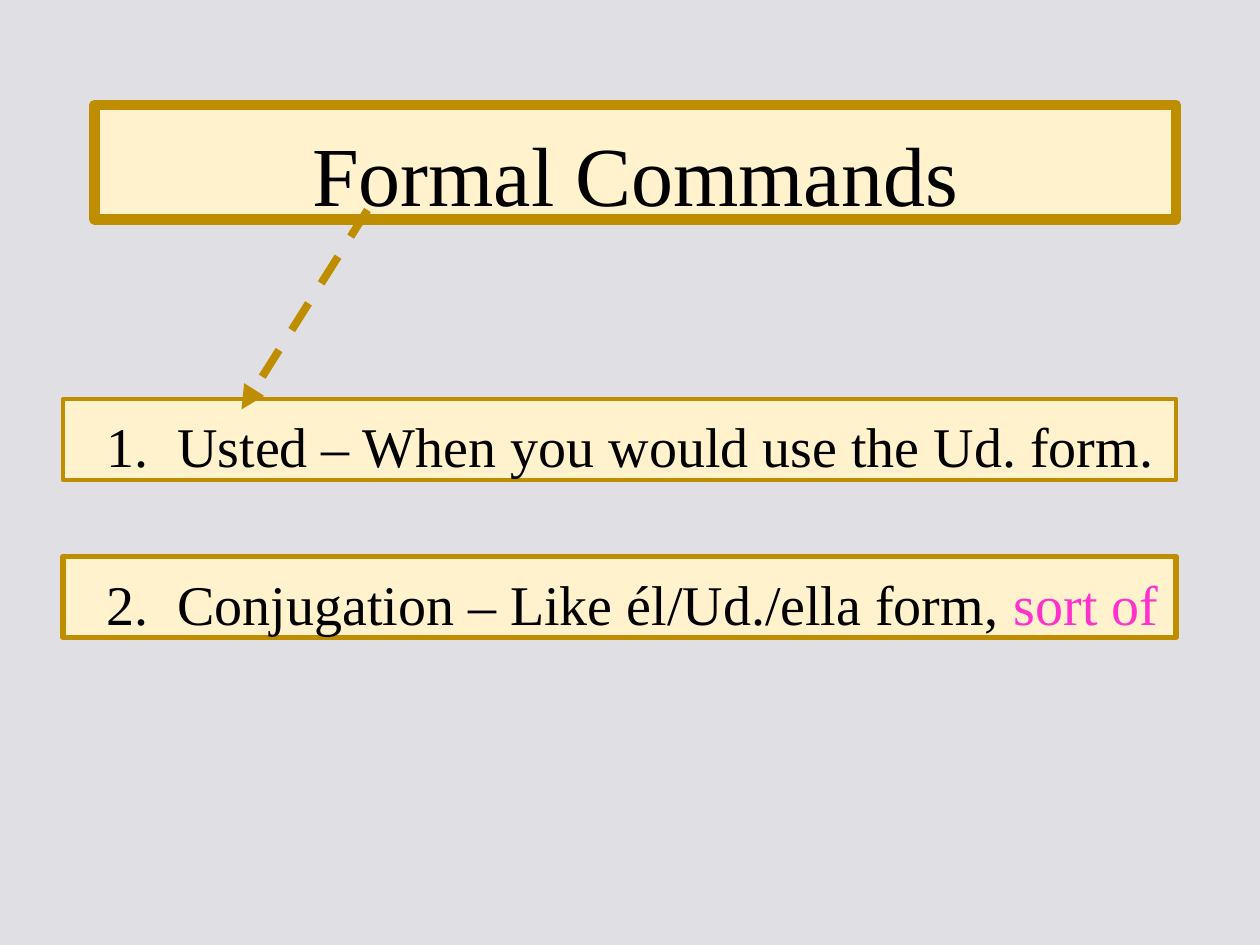
from lxml.etree import SubElement
from pptx import Presentation
from pptx.dml.color import RGBColor
from pptx.enum.dml import MSO_LINE
from pptx.enum.shapes import MSO_CONNECTOR, MSO_SHAPE
from pptx.enum.text import MSO_ANCHOR, PP_ALIGN
from pptx.oxml.ns import qn
from pptx.util import Inches, Pt

GREY = RGBColor(0xDF, 0xDF, 0xE4)
CREAM = RGBColor(0xFF, 0xF2, 0xCC)
GOLD = RGBColor(0xBF, 0x8E, 0x00)
BLACK = RGBColor(0, 0, 0)
PINK = RGBColor(0xFF, 0x33, 0xCC)
FONT = "Times New Roman"
LEFT, WIDTH, HEIGHT = 6, 106, 7.7


def cell(count):
    """Turn a count of grid cells, twelve to the inch, into a length."""
    return Inches(count / 12)


def add_box(slide, spot, edge, size, runs, top):
    """Add a framed box with coloured runs and return its paragraph."""
    box = slide.shapes.add_shape(MSO_SHAPE.RECTANGLE, *map(cell, spot))
    box.shadow.inherit = False
    box.fill.solid()
    box.fill.fore_color.rgb = CREAM
    box.line.color.rgb = GOLD
    box.line.width = Pt(edge)
    frame = box.text_frame
    frame.word_wrap = True
    frame.vertical_anchor = MSO_ANCHOR.TOP
    frame.margin_top, frame.margin_bottom = Inches(top), 0
    para = frame.paragraphs[0]
    for text, color in runs:
        run = para.add_run()
        run.text = text
        run.font.name = FONT
        run.font.size = Pt(size)
        run.font.color.rgb = color
    return para


def add_title(slide, text):
    """Add the centred title box."""
    para = add_box(slide, (9, 10, 103, 10.9), 6, 48, [(text, BLACK)], 0.14)
    para.alignment = PP_ALIGN.CENTER


def add_item(slide, row, edge, start, runs):
    """Add a boxed list item with an automatic number."""
    para = add_box(slide, (LEFT, row, WIDTH, HEIGHT), edge, 32, runs, 0.1)
    para.alignment = PP_ALIGN.LEFT
    props = para._p.get_or_add_pPr()
    props.set("marL", str(Inches(0.81)))
    props.set("indent", str(Inches(-0.56)))
    SubElement(props, qn("a:buFont"), typeface=FONT)
    SubElement(props, qn("a:buAutoNum"), type="arabicPeriod", startAt=str(start))


def add_arrow(slide, *ends):
    """Add a dashed arrow between two grid points."""
    arrow = slide.shapes.add_connector(MSO_CONNECTOR.STRAIGHT, *map(cell, ends))
    arrow.line.color.rgb = GOLD
    arrow.line.width = Pt(4.5)
    arrow.line.dash_style = MSO_LINE.DASH
    SubElement(arrow.line._get_or_add_ln(), qn("a:tailEnd"), type="triangle")
    SubElement(arrow._element.spPr, qn("a:effectLst"))


def main():
    """Build the slide and save it."""
    deck = Presentation()
    deck.slide_width, deck.slide_height = cell(120), cell(90)
    slide = deck.slides.add_slide(deck.slide_layouts[6])
    slide.background.fill.solid()
    slide.background.fill.fore_color.rgb = GREY
    add_title(slide, "Formal Commands")
    items = [
        (38, 2.25, [("Usted – When you would use the Ud. form.", BLACK)]),
        (53, 3, [("Conjugation – Like él/Ud./ella form, ", BLACK), ("sort of", PINK)]),
    ]
    for start, (row, edge, runs) in enumerate(items, 1):
        add_item(slide, row, edge, start, runs)
    add_arrow(slide, 35, 20, 23, 39)
    deck.save("out.pptx")


if __name__ == "__main__":
    main()
